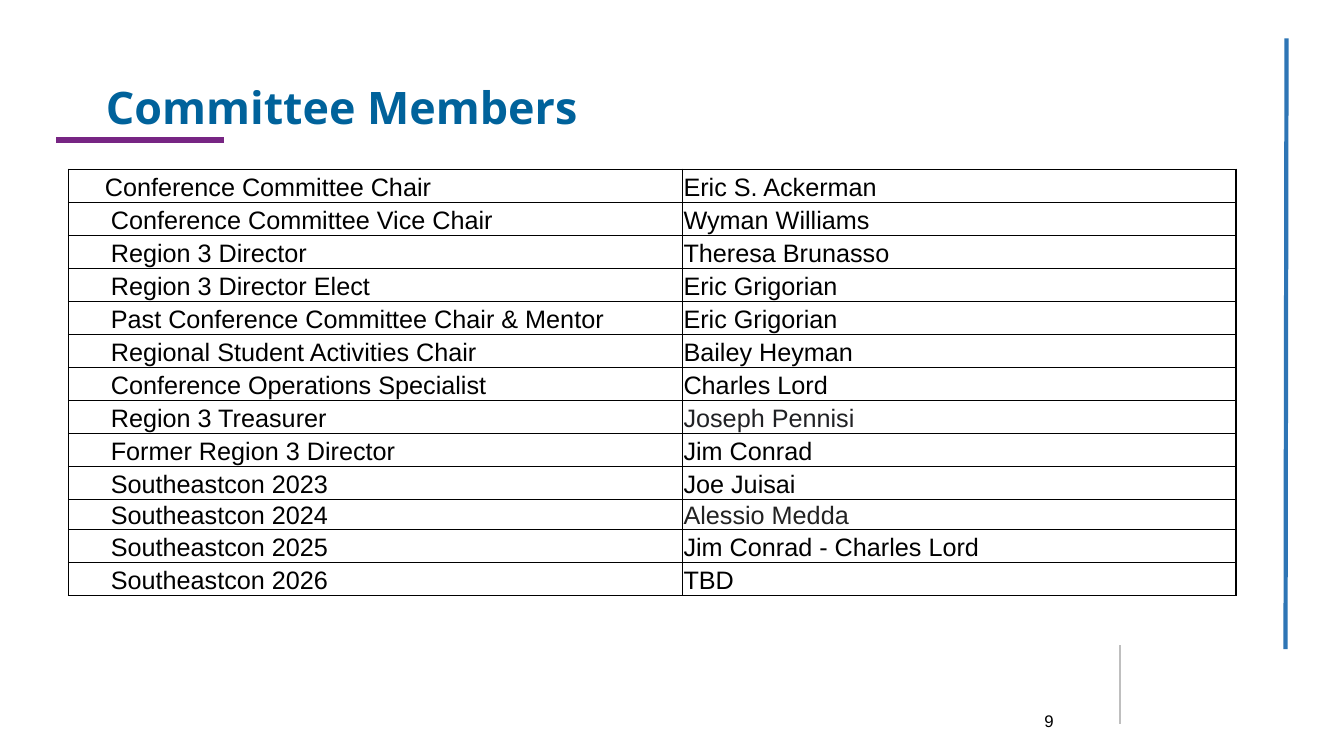
from lxml import etree
from pptx import Presentation
from pptx.dml.color import RGBColor
from pptx.enum import shapes, text
from pptx.oxml.ns import qn
from pptx.util import Inches, Pt

MEMBERS = [
    ("Conference Committee Chair", "Eric S. Ackerman"),
    ("Conference Committee Vice Chair", "Wyman Williams"),
    ("Region 3 Director", "Theresa Brunasso"),
    ("Region 3 Director Elect", "Eric Grigorian"),
    ("Past Conference Committee Chair & Mentor", "Eric Grigorian"),
    ("Regional Student Activities Chair", "Bailey Heyman"),
    ("Conference Operations Specialist", "Charles Lord"),
    ("Region 3 Treasurer", "Joseph Pennisi"),
    ("Former Region 3 Director", "Jim Conrad"),
    ("Southeastcon 2023", "Joe Juisai"),
    ("Southeastcon 2024", "Alessio Medda"),
    ("Southeastcon 2025", "Jim Conrad - Charles Lord"),
    ("Southeastcon 2026", "TBD"),
]
NAME_COLORS = {"Joseph Pennisi": "202124", "Alessio Medda": "222222"}
SHORT_ROW = 10
TABLE_HEIGHT, SHORT_HEIGHT = 4.23, 0.3
ROW_HEIGHT = (TABLE_HEIGHT - SHORT_HEIGHT) / (len(MEMBERS) - 1)


def add_span(frame, words, size, color="000000", font="Arial", bold=False):
    """Add a styled run to the first paragraph of a text frame."""
    span = frame.paragraphs[0].add_run()
    span.text = words
    span.font.name = font
    span.font.size = Pt(size)
    span.font.bold = bold
    span.font.color.rgb = RGBColor.from_string(color)


def add_borders(cell):
    """Draw a thin black line on every side of a table cell."""
    properties = cell._tc.get_or_add_tcPr()
    for position, side in enumerate(("a:lnL", "a:lnR", "a:lnT", "a:lnB")):
        border = etree.Element(qn(side), w=str(Pt(1)))
        fill = etree.SubElement(border, qn("a:solidFill"))
        etree.SubElement(fill, qn("a:srgbClr"), val="000000")
        properties.insert(position, border)


deck = Presentation()
deck.slide_width, deck.slide_height = Inches(13.33), Inches(7.5)
page = deck.slides.add_slide(deck.slide_layouts[6])

# Rules: footer divider, title underline, right edge
for x1, y1, x2, y2, color, width in (
    (11.11, 6.4, 11.11, 7.18, "BFBFBF", 1.5),
    (0.56, 1.39, 2.22, 1.39, "772583", 4.25),
    (12.76, 0.38, 12.75, 6.44, "2E75B5", 3),
):
    rule = page.shapes.add_connector(
        shapes.MSO_CONNECTOR.STRAIGHT, Inches(x1), Inches(y1), Inches(x2), Inches(y2))
    rule.line.color.rgb = RGBColor.from_string(color)
    rule.line.width = Pt(width)
    etree.SubElement(rule._element.spPr, qn("a:effectLst"))

# Member table
table = page.shapes.add_table(
    len(MEMBERS), 2, Inches(0.68), Inches(1.68), Inches(11.58), Inches(TABLE_HEIGHT)).table
table.first_row = table.horz_banding = False
table.columns[0].width, table.columns[1].width = Inches(6.09), Inches(5.49)
for index, member in enumerate(MEMBERS):
    table.rows[index].height = Inches(SHORT_HEIGHT if index == SHORT_ROW else ROW_HEIGHT)
    role_indent = 0.36 if index == 0 else 0.42
    for column, (words, indent) in enumerate(zip(member, (role_indent, 0.01))):
        cell = table.cell(index, column)
        cell.fill.background()
        cell.vertical_anchor = text.MSO_ANCHOR.BOTTOM
        cell.margin_left = Inches(indent)
        cell.margin_top = cell.margin_right = Inches(0.01)
        cell.margin_bottom = 0
        add_span(cell.text_frame, words, 18, NAME_COLORS.get(words, "000000"))
        add_borders(cell)

# Title
title = page.shapes.add_textbox(Inches(0.92), Inches(0.4), Inches(10.26), Inches(1)).text_frame
title.word_wrap = True
title.vertical_anchor = text.MSO_ANCHOR.BOTTOM
title.margin_left = title.margin_right = Inches(0.13)
title.margin_top = title.margin_bottom = Inches(0.07)
title.paragraphs[0].line_spacing = 0.9
add_span(title, "Committee Members", 32, "00629B", "Open Sans", True)

# Page number
number = page.shapes.add_textbox(
    Inches(10.26), Inches(6.95), Inches(2.16), Inches(0.4)).text_frame
number.word_wrap = True
number.vertical_anchor = text.MSO_ANCHOR.MIDDLE
add_span(number, "9", 12)

deck.save("out.pptx")
